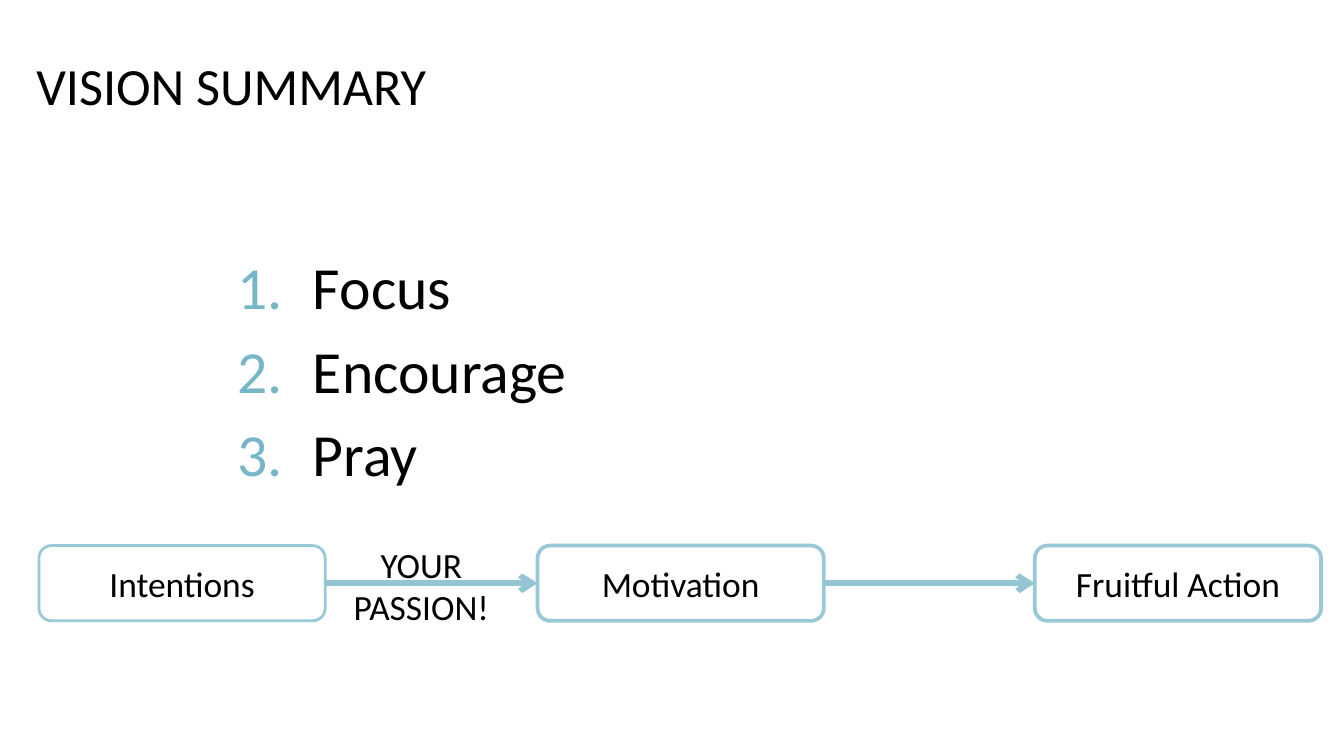
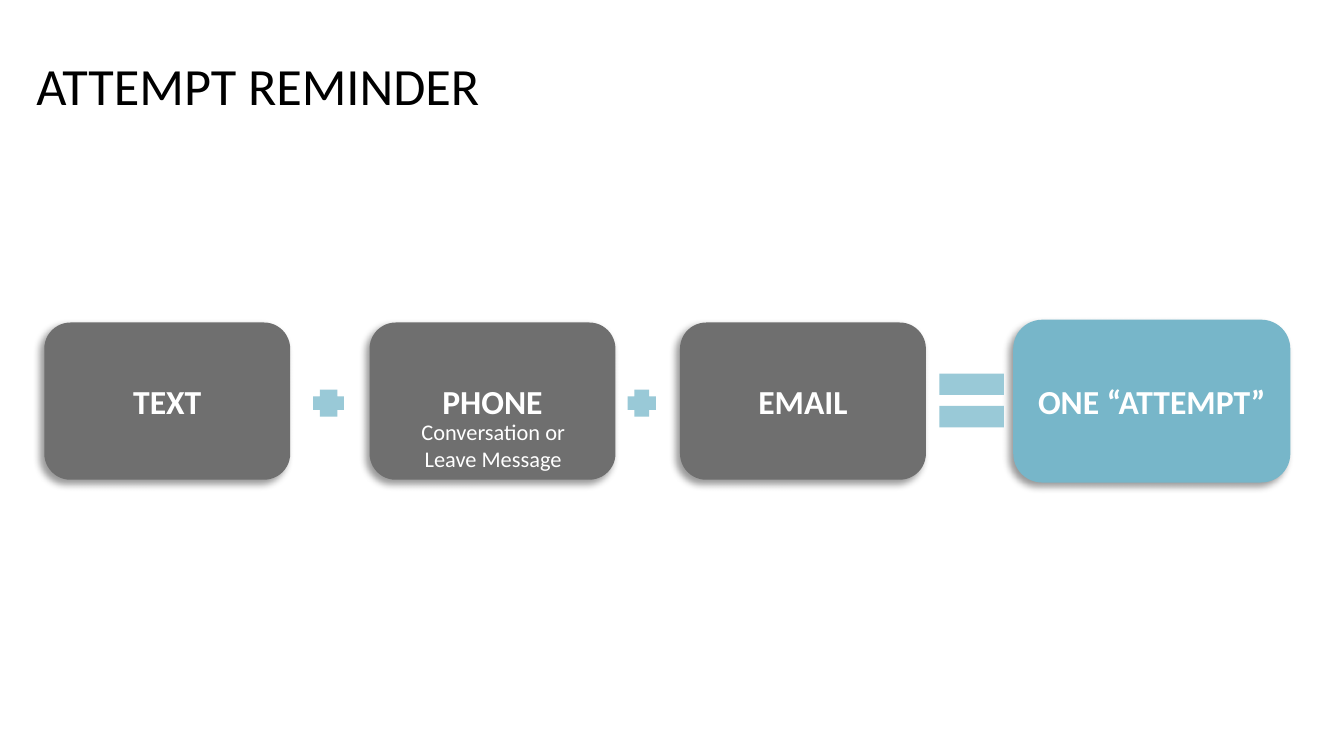
from pptx import Presentation
from pptx.dml.color import RGBColor
from pptx.enum.shapes import MSO_CONNECTOR as Link, MSO_SHAPE as Kind
from pptx.enum.text import MSO_ANCHOR as Anchor, PP_ALIGN as Align
from pptx.oxml.ns import qn
from pptx.util import Inches, Pt
from lxml.etree import SubElement

# Shared style
FONT = "Calibri"
BLACK, WHITE, GREY = "000000", "FFFFFF", "6F6F6F"
TEAL, PALE, ARROW = "77B6C9", "99C9D7", "94C5D4"


def color(code):
    return RGBColor.from_string(code)


def add_run(para, text, size, code, bold=False):
    run = para.add_run()
    run.text = text
    font = run.font
    font.name, font.size, font.bold = FONT, Pt(size), bold
    font.color.rgb = color(code)


def add_lines(frame, lines, size, code, bold=False):
    for i, text in enumerate(lines):
        para = frame.add_paragraph() if i else frame.paragraphs[0]
        para.alignment = Align.CENTER
        add_run(para, text, size, code, bold)


def add_text(slide, box, wrap=True):
    frame = slide.shapes.add_textbox(*map(Inches, box)).text_frame
    frame.word_wrap = wrap
    return frame


def add_box(slide, kind, box, fill, line=None, width=0):
    shape = slide.shapes.add_shape(kind, *map(Inches, box))
    shape.shadow.inherit = False
    shape.fill.solid()
    shape.fill.fore_color.rgb = color(fill)
    if line:
        shape.line.color.rgb = color(line)
        shape.line.width = Pt(width)
    else:
        shape.line.fill.background()
    shape.text_frame.vertical_anchor = Anchor.MIDDLE
    return shape


def add_shadow(shape):
    effects = shape._element.spPr.find(qn("a:effectLst"))
    outer = SubElement(effects, qn("a:outerShdw"), blurRad=str(Pt(4)),
                       dist=str(Pt(3)), dir=str(135 * 60000), rotWithShape="0")
    tint = SubElement(outer, qn("a:srgbClr"), val=BLACK)
    SubElement(tint, qn("a:alpha"), val="40000")


def add_slide(deck, text):
    slide = deck.slides.add_slide(deck.slide_layouts[5])
    title = slide.shapes.title
    title.left, title.top, title.width, title.height = map(
        Inches, (0.17, 0.2, 9.25, 0.86))
    frame = title.text_frame
    frame.vertical_anchor = Anchor.MIDDLE
    para = frame.paragraphs[0]
    para.alignment = Align.LEFT
    add_run(para, text, 28, BLACK)
    return slide


# Numbered list
def add_list(slide, box, items):
    frame = add_text(slide, box)
    for i, text in enumerate(items):
        para = frame.add_paragraph() if i else frame.paragraphs[0]
        props = para._p.get_or_add_pPr()
        props.set("marL", str(Inches(0.56)))
        props.set("indent", str(-Inches(0.56)))
        tint = SubElement(props, qn("a:buClr"))
        SubElement(tint, qn("a:srgbClr"), val=TEAL)
        SubElement(props, qn("a:buFont"), typeface=FONT)
        SubElement(props, qn("a:buAutoNum"), type="arabicPeriod")
        if i:
            para.space_before = Pt(6.4)
        add_run(para, text, 32, BLACK)


# Arrow from the right side of one step to the left side of the next
def add_arrow(slide, start, end):
    line = slide.shapes.add_connector(Link.STRAIGHT, 0, 0, 0, 0)
    line.begin_connect(start, 3)
    line.end_connect(end, 1)
    line.line.color.rgb = color(ARROW)
    line.line.width = Pt(3)
    SubElement(line.line._get_or_add_ln(), qn("a:tailEnd"), type="arrow")
    SubElement(line._element.spPr, qn("a:effectLst"))


# Row of steps joined by arrows
def add_flow(slide, left, top):
    label = add_text(slide, (left + 2.18, top - 0.07, 1.33, 0.74), False)
    add_lines(label, ["YOUR", "PASSION!"], 19, BLACK)
    steps = []
    for name, x, width in (("Intentions", 0, 1.5), ("Motivation", 3.71, 2),
                           ("Fruitful Action", 7.41, 2)):
        step = add_box(slide, Kind.ROUNDED_RECTANGLE,
                       (left + x, top, 2.13, 0.56), WHITE, PALE, width)
        add_lines(step.text_frame, [name], 19, BLACK)
        steps.append(step)
    for start, end in zip(steps, steps[1:]):
        add_arrow(slide, start, end)


# Sum of contact steps
def add_card(slide, box, text, fill, line=None):
    card = add_box(slide, Kind.ROUNDED_RECTANGLE, box, fill, line, 3)
    add_shadow(card)
    add_lines(card.text_frame, [text], 18, WHITE, True)


def add_sum(slide, left, top):
    add_card(slide, (left + 7.23, top, 2.02, 1.17), "ONE “ATTEMPT”", TEAL, TEAL)
    for y in (0.38, 0.62):
        add_box(slide, Kind.RECTANGLE, (left + 6.66, top + y, 0.48, 0.16), PALE)
    for x, width in ((2, 0.23), (4.34, 0.21)):
        add_box(slide, Kind.CROSS, (left + x, top + 0.5, width, 0.2), PALE)
    for text, x in (("TEXT", 0), ("PHONE", 2.42), ("EMAIL", 4.73)):
        add_card(slide, (left + x, top, 1.83, 1.17), text, GREY)
    note = add_text(slide, (left + 2.59, top + 0.66, 1.5, 0.5))
    add_lines(note, ["Conversation or", "Leave Message"], 12, WHITE)


def main():
    deck = Presentation()
    deck.slide_width = Inches(10)
    deck.slide_height = deck.slide_width * 9 // 16
    vision = add_slide(deck, "VISION SUMMARY")
    add_list(vision, (1.67, 1.81, 8.33, 3.67), ["Focus", "Encourage", "Pray"])
    add_flow(vision, 0.29, 4.06)
    remind = add_slide(deck, "ATTEMPT REMINDER")
    add_sum(remind, 0.33, 2.4)
    deck.save("out.pptx")


if __name__ == "__main__":
    main()
